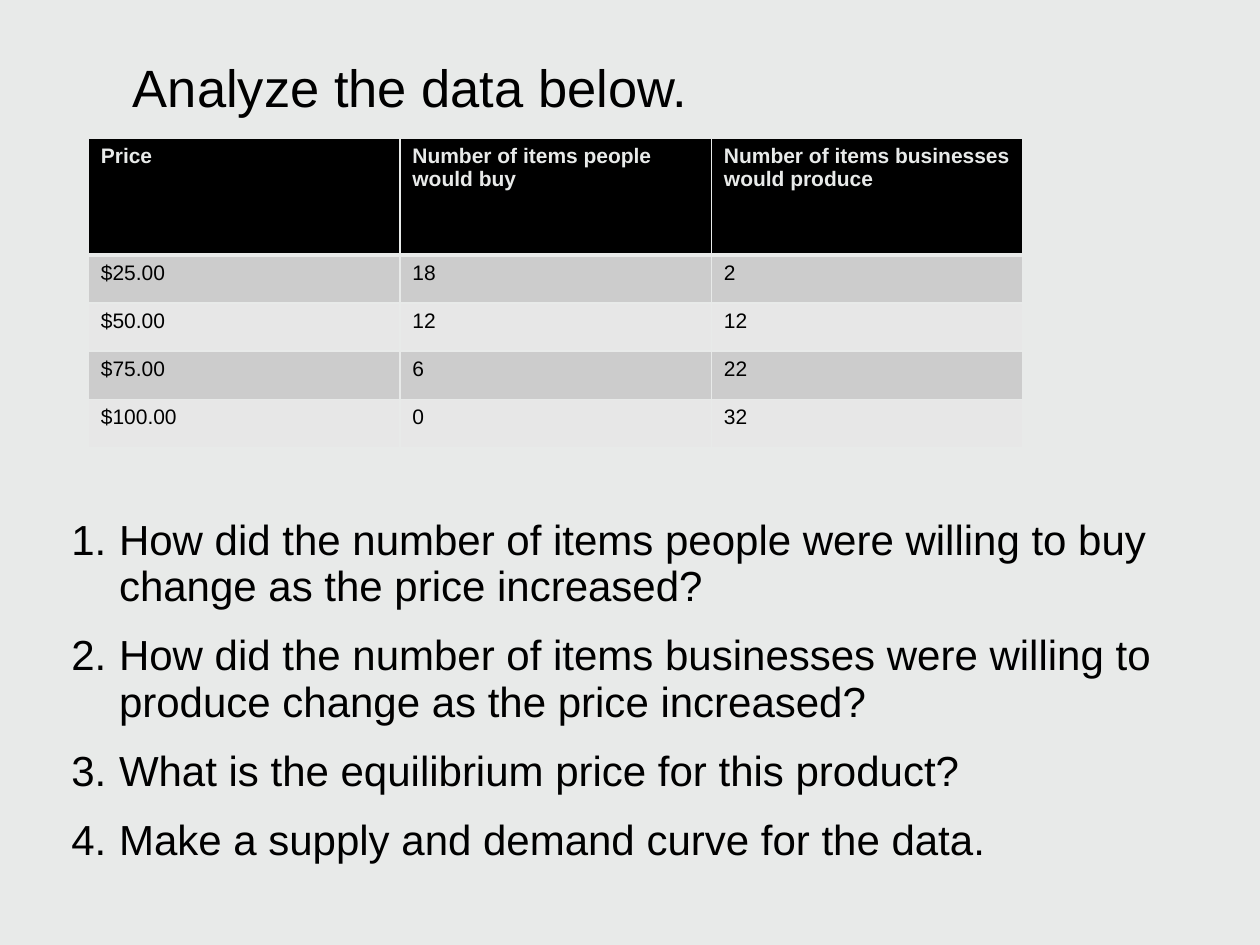
import pptx
import pptx.util
import pptx.dml.color
import pptx.enum.text
import pptx.oxml.ns
from lxml import etree

Cm, Pt = pptx.util.Cm, pptx.util.Pt
FONT = "Arial"
COLORS = {
    "background": "E8EAE9",
    "text": "000000",
    "header": "000000",
    "odd": "CCCCCC",
    "even": "E7E7E7",
}
ROWS = [
    ["Price", "Number of items people would buy", "Number of items businesses would produce"],
    ["$25.00", "18", "2"],
    ["$50.00", "12", "12"],
    ["$75.00", "6", "22"],
    ["$100.00", "0", "32"],
]
QUESTIONS = [
    "How did the number of items people were willing to buy change as the price increased?",
    "How did the number of items businesses were willing to produce change as the price increased?",
    "What is the equilibrium price for this product?",
    "Make a supply and demand curve for the data.",
]


def rgb(name):
    return pptx.dml.color.RGBColor.from_string(COLORS[name])


def sub(parent, tag, **attrs):
    return etree.SubElement(parent, pptx.oxml.ns.qn(tag), attrs)


def style(p, size, color="text", bold=False):
    p.font.name = FONT
    p.font.size = Pt(size)
    p.font.bold = bold
    p.font.color.rgb = rgb(color)


def add_text_frame(s, box):
    tf = s.shapes.add_textbox(*map(Cm, box)).text_frame
    tf.word_wrap = True
    return tf


def add_title(s, box):
    tf = add_text_frame(s, box)
    tf.vertical_anchor = pptx.enum.text.MSO_ANCHOR.MIDDLE
    p = tf.paragraphs[0]
    p.text = "Analyze the data below."
    p.alignment = pptx.enum.text.PP_ALIGN.CENTER
    p.line_spacing = 0.9
    style(p, 30)


def set_borders(cell, bottom, top):
    tcPr = cell._tc.get_or_add_tcPr()
    for tag, width in (("a:lnL", 1), ("a:lnR", 1), ("a:lnT", top), ("a:lnB", bottom)):
        ln = sub(tcPr, tag, w=str(Pt(width)))
        sub(sub(ln, "a:solidFill"), "a:srgbClr", val=COLORS["background"])


def add_data_table(s, box, header_height):
    left, top, width, height = box
    table = s.shapes.add_table(len(ROWS), len(ROWS[0]), *map(Cm, box)).table
    for column in table.columns:
        column.width = Cm(width / len(ROWS[0]))
    for i, values in enumerate(ROWS):
        header = i == 0
        body_height = (height - header_height) / (len(ROWS) - 1)
        table.rows[i].height = Cm(header_height if header else body_height)
        fill = "header" if header else ("odd" if i % 2 else "even")
        for j, value in enumerate(values):
            cell = table.cell(i, j)
            cell.text = value
            set_borders(cell, bottom=3 if header else 1, top=3 if i == 1 else 1)
            cell.fill.solid()
            cell.fill.fore_color.rgb = rgb(fill)
            style(cell.text_frame.paragraphs[0], 12, "background" if header else "text", header)


def add_questions(s, box):
    tf = add_text_frame(s, box)
    for i, question in enumerate(QUESTIONS):
        p = tf.add_paragraph() if i else tf.paragraphs[0]
        p.text = question
        p.line_spacing = 0.93
        p.space_before = Pt(12.5 if i else 0)
        pPr = p._p.get_or_add_pPr()
        pPr.set("marL", str(Cm(0.96)))
        pPr.set("indent", str(Cm(-0.96)))
        sub(pPr, "a:buFont", typeface=FONT)
        sub(pPr, "a:buAutoNum", type="arabicPeriod")
        style(p, 24)


def main():
    prs = pptx.Presentation()
    prs.slide_width, prs.slide_height = Cm(25.4), Cm(19.05)
    s = prs.slides.add_slide(prs.slide_layouts[6])
    s.background.fill.solid()
    s.background.fill.fore_color.rgb = rgb("background")
    add_title(s, (1.78, 0.79, 12.98, 2.06))
    add_data_table(s, (1.78, 2.78, 18.84, 6.24), 2.36)
    add_questions(s, (1.19, 10.31, 23.62, 7.87))
    prs.save("out.pptx")


if __name__ == "__main__":
    main()
